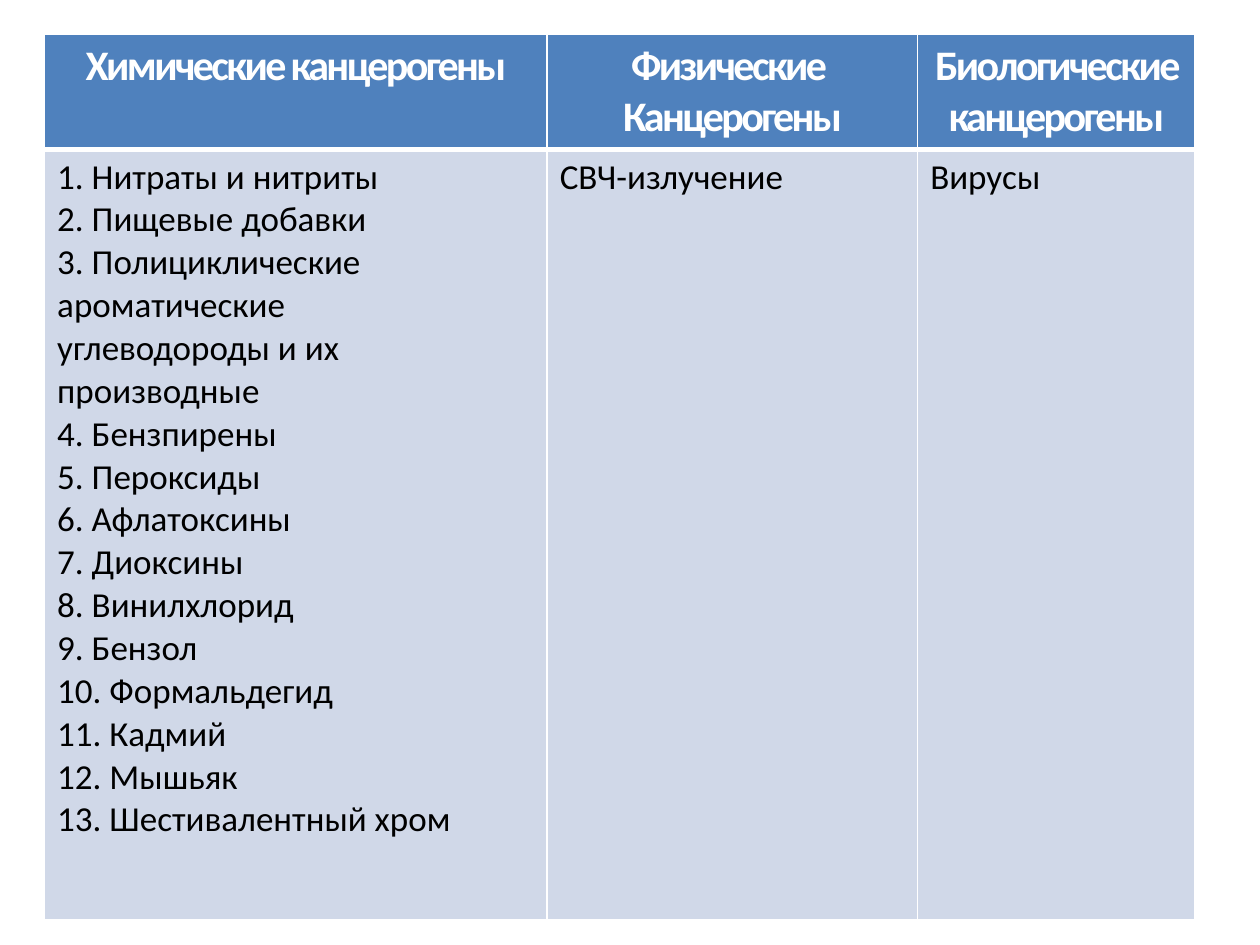
from lxml.etree import SubElement
from pptx import Presentation
from pptx.dml.color import RGBColor
from pptx.enum.text import PP_ALIGN
from pptx.oxml.ns import qn
from pptx.util import Cm, Pt

WHITE = RGBColor(0xFF, 0xFF, 0xFF)
BLACK = RGBColor(0x00, 0x00, 0x00)
HEADER_BLUE = RGBColor(0x4F, 0x81, 0xBD)
BODY_BLUE = RGBColor(0xD0, 0xD8, 0xE8)

headings = [
    ["Химические канцерогены"],
    ["Физические ", "Канцерогены"],
    ["Биологические канцерогены"],
]
carcinogens = [
    [
        "1. Нитраты и нитриты",
        "2. Пищевые добавки",
        "3. Полициклические ароматические",
        "углеводороды и их производные",
        "4. Бензпирены",
        "5. Пероксиды",
        "6. Афлатоксины",
        "7. Диоксины",
        "8. Винилхлорид",
        "9. Бензол",
        "10. Формальдегид",
        "11. Кадмий",
        "12. Мышьяк",
        "13. Шестивалентный хром",
    ],
    ["СВЧ-излучение"],
    ["Вирусы"],
]
column_widths = [Cm(10.13), Cm(7.47), Cm(5.59)]
row_heights = [Cm(2.31), Cm(15.52)]


def set_borders(cell, top, bottom):
    """Draw white cell borders; widths in points, sides always 1 pt."""
    properties = cell._tc.get_or_add_tcPr()
    for side, width in (("L", 1), ("R", 1), ("T", top), ("B", bottom)):
        line = SubElement(properties, qn(f"a:ln{side}"), w=str(Pt(width)))
        fill = SubElement(line, qn("a:solidFill"))
        SubElement(fill, qn("a:srgbClr"), val=str(WHITE))


def fill_cell(cell, lines, size, color, bold, align, spacing):
    """Write one paragraph per line."""
    for index, line in enumerate(lines):
        frame = cell.text_frame
        paragraph = frame.paragraphs[0] if index == 0 else frame.add_paragraph()
        paragraph.alignment = align
        run = paragraph.add_run()
        run.text = line
        run.font.name = "Calibri"
        run.font.size = Pt(size)
        run.font.bold = bold
        run.font.color.rgb = color
        run.font._element.set("spc", str(spacing))


prs = Presentation()
prs.slide_width = Cm(25.4)
prs.slide_height = Cm(19.05)
slide = prs.slides.add_slide(prs.slide_layouts[6])

# Table grid
table = slide.shapes.add_table(
    2, 3, Cm(0.9), Cm(0.69), sum(column_widths), sum(row_heights)
).table
for column, width in zip(table.columns, column_widths):
    column.width = width
for row, height in zip(table.rows, row_heights):
    row.height = height

# Header row
for cell, lines in zip(table.rows[0].cells, headings):
    set_borders(cell, 1, 3)
    cell.fill.solid()
    cell.fill.fore_color.rgb = HEADER_BLUE
    fill_cell(cell, lines, 24, WHITE, True, PP_ALIGN.CENTER, -150)

# Carcinogen lists
for cell, lines in zip(table.rows[1].cells, carcinogens):
    set_borders(cell, 3, 1)
    cell.fill.solid()
    cell.fill.fore_color.rgb = BODY_BLUE
    fill_cell(cell, lines, 20, BLACK, False, PP_ALIGN.LEFT, 0)

prs.save("out.pptx")
